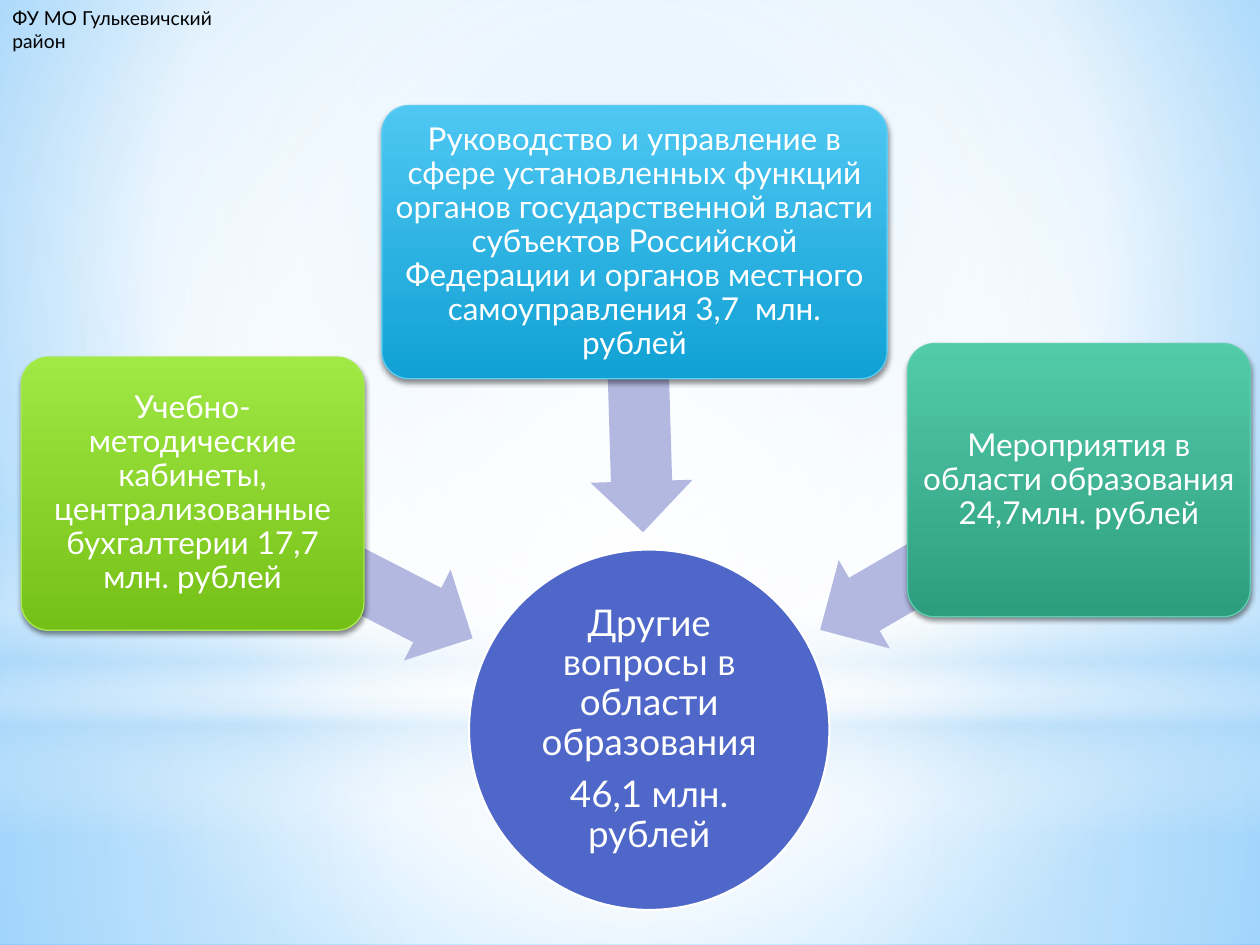
import pptx
import pptx.util
import pptx.dml.color
import pptx.enum.shapes
import pptx.enum.text
import pptx.oxml
import pptx.oxml.ns
from lxml import etree

Pt = pptx.util.Pt
qn = pptx.oxml.ns.qn
SHAPE = pptx.enum.shapes.MSO_SHAPE
ALIGN = pptx.enum.text.PP_ALIGN
ANCHOR = pptx.enum.text.MSO_ANCHOR

COLORS = {
    "white": "FFFFFF", "black": "000000", "mist": "B4DCFA",
    "sky": "9ED5FF", "deep_sky": "5BB9FF",
    "indigo": "4E67C8", "lavender": "B2B8E0",
    "blue_top": "4EC7F2", "blue_low": "11A1D4", "blue_line": "5ECCF3",
    "green_top": "A0E844", "green_low": "75C016", "green_line": "A7EA52",
    "teal_top": "52CBA9", "teal_low": "2E9D7F", "teal_line": "5DCEAF",
}
W, H = 720, 540
CENTER = (50, 50, 50, 50)


class Deck:
    font = "Lato"
    arrow_height = 58.3
    card_height = 156.2

    def __init__(self):
        self.prs = pptx.Presentation()
        self.prs.slide_width, self.prs.slide_height = Pt(W), Pt(H)
        self.s = self.prs.slides.add_slide(self.prs.slide_layouts[6])

    def rgb(self, name):
        return pptx.dml.color.RGBColor.from_string(COLORS[name])

    def gradient(self, owner, stops, focus=None):
        grad = etree.Element(qn("a:gradFill"), rotWithShape="1")
        stop_list = etree.SubElement(grad, qn("a:gsLst"))
        for pos, color, alpha in stops:
            gs = etree.SubElement(stop_list, qn("a:gs"), pos=str(pos * 1000))
            clr = etree.SubElement(gs, qn("a:srgbClr"), val=COLORS[color])
            if alpha < 100:
                etree.SubElement(clr, qn("a:alpha"), val=str(alpha * 1000))
        if focus:
            shade = etree.SubElement(grad, qn("a:path"), {"path": "circle"})
            sides = {side: str(v * 1000) for side, v in zip("ltrb", focus)}
            etree.SubElement(shade, qn("a:fillToRect"), sides)
        else:
            etree.SubElement(grad, qn("a:lin"), ang="5400000", scaled="0")
        owner.replace(owner.find(qn("a:solidFill")), grad)

    def background(self, stops, focus):
        self.s.background.fill.solid()
        self.s.background.fill.fore_color.rgb = self.rgb("white")
        self.gradient(self.s.element.find(".//" + qn("p:bgPr")), stops, focus)

    def shape(self, kind, box, fill="white", line=None, weight=1):
        sp = self.s.shapes.add_shape(kind, *map(Pt, box))
        sp.shadow.inherit = False
        sp.fill.solid()
        sp.fill.fore_color.rgb = self.rgb(fill)
        if line:
            sp.line.color.rgb = self.rgb(line)
            sp.line.width = Pt(weight)
        else:
            sp.line.fill.background()
        return sp

    def veil(self, kind, box, stops, focus=None):
        sp = self.shape(kind, box)
        self.gradient(sp.element.spPr, stops, focus)

    def caption(self, sp, paragraphs, size, inset):
        tf = sp.text_frame
        tf.word_wrap = True
        tf.vertical_anchor = ANCHOR.MIDDLE
        tf.margin_left = tf.margin_top = Pt(inset)
        tf.margin_right = tf.margin_bottom = Pt(inset)
        tf.text = "\n".join(paragraphs)
        for p in tf.paragraphs:
            p.alignment = ALIGN.CENTER
            p.line_spacing = 0.9
            p.space_after = Pt(round(size * 0.35, 1))
            self.style(p, size, "white")

    def style(self, p, size, color):
        p.font.name = self.font
        p.font.size = Pt(size)
        p.font.color.rgb = self.rgb(color)

    def circle(self, box, paragraphs):
        sp = self.shape(SHAPE.OVAL, box, "indigo", "white", 1.25)
        self.caption(sp, paragraphs, 21, 1)

    def arrow(self, left, top, width, rotation):
        box = (left, top, width, self.arrow_height)
        sp = self.shape(SHAPE.LEFT_ARROW, box, "lavender")
        sp.adjustments[0], sp.adjustments[1] = 0.6, 0.5
        sp.rotation = rotation

    def card(self, left, top, width, hue, text):
        box = (left, top, width, self.card_height)
        sp = self.shape(SHAPE.ROUNDED_RECTANGLE, box, line=hue + "_line", weight=0.75)
        sp.adjustments[0] = 0.1
        spPr = sp.element.spPr
        self.gradient(spPr, [(0, hue + "_top", 100), (100, hue + "_low", 100)])
        shadow = etree.SubElement(
            spPr.find(qn("a:effectLst")), qn("a:outerShdw"), blurRad=str(int(Pt(3.1))),
            dist=str(int(Pt(1.8))), dir="5400000", algn="ctr", rotWithShape="0")
        clr = etree.SubElement(shadow, qn("a:srgbClr"), val=COLORS["black"])
        etree.SubElement(clr, qn("a:alpha"), val="45000")
        self.caption(sp, [text], 18, 3)

    def label(self, box, text):
        tf = self.s.shapes.add_textbox(*map(Pt, box)).text_frame
        tf.word_wrap = True
        tf.text = text
        self.style(tf.paragraphs[0], 11, "black")


def main():
    deck = Deck()
    deck.background([(0, "sky", 100), (60, "white", 100), (100, "deep_sky", 100)],
                    (20, 10, 20, 60))
    deck.veil(SHAPE.RECTANGLE, (0, 402, W, 138),
              [(0, "white", 91), (37, "white", 76), (100, "mist", 79)], CENTER)
    deck.veil(SHAPE.RECTANGLE, (0, 0, W, 402),
              [(0, "white", 89), (48, "white", 62), (100, "mist", 79)], CENTER)
    deck.veil(SHAPE.RECTANGLE, (0, 297, W, 180),
              [(0, "white", 0), (29, "white", 30), (45, "mist", 40),
               (55, "white", 26), (65, "mist", 60), (100, "white", 0)])
    deck.veil(SHAPE.OVAL, (0, 126, W, 402),
              [(0, "white", 100), (56, "white", 0)], CENTER)

    deck.circle((268, 314, 206, 206),
                ["Другие вопросы в области образования", "46,1 млн. рублей"])
    branches = [
        ((282.2, 192.2, 165.6, 268.3), (218.2, 60.3, 288.7), "blue",
         "Руководство и управление в сфере установленных функций органов "
         "государственной власти субъектов Российской Федерации и органов "
         "местного самоуправления 3,7  млн. рублей"),
        ((100, 294.5, 180, 207.2), (12.2, 204, 195.8), "green",
         "Учебно-методические кабинеты, централизованные бухгалтерии "
         "17,7 млн. рублей"),
        ((457.2, 288, 170.6, 329.9), (518.6, 196.3, 195.8), "teal",
         "Мероприятия в области образования 24,7млн. рублей"),
    ]
    for arrow, place, hue, text in branches:
        deck.arrow(*arrow)
        deck.card(*place, hue, text)
    deck.label((0, 0, 161.3, 21), "ФУ МО Гулькевичский район")
    deck.prs.save("out.pptx")


if __name__ == "__main__":
    main()
